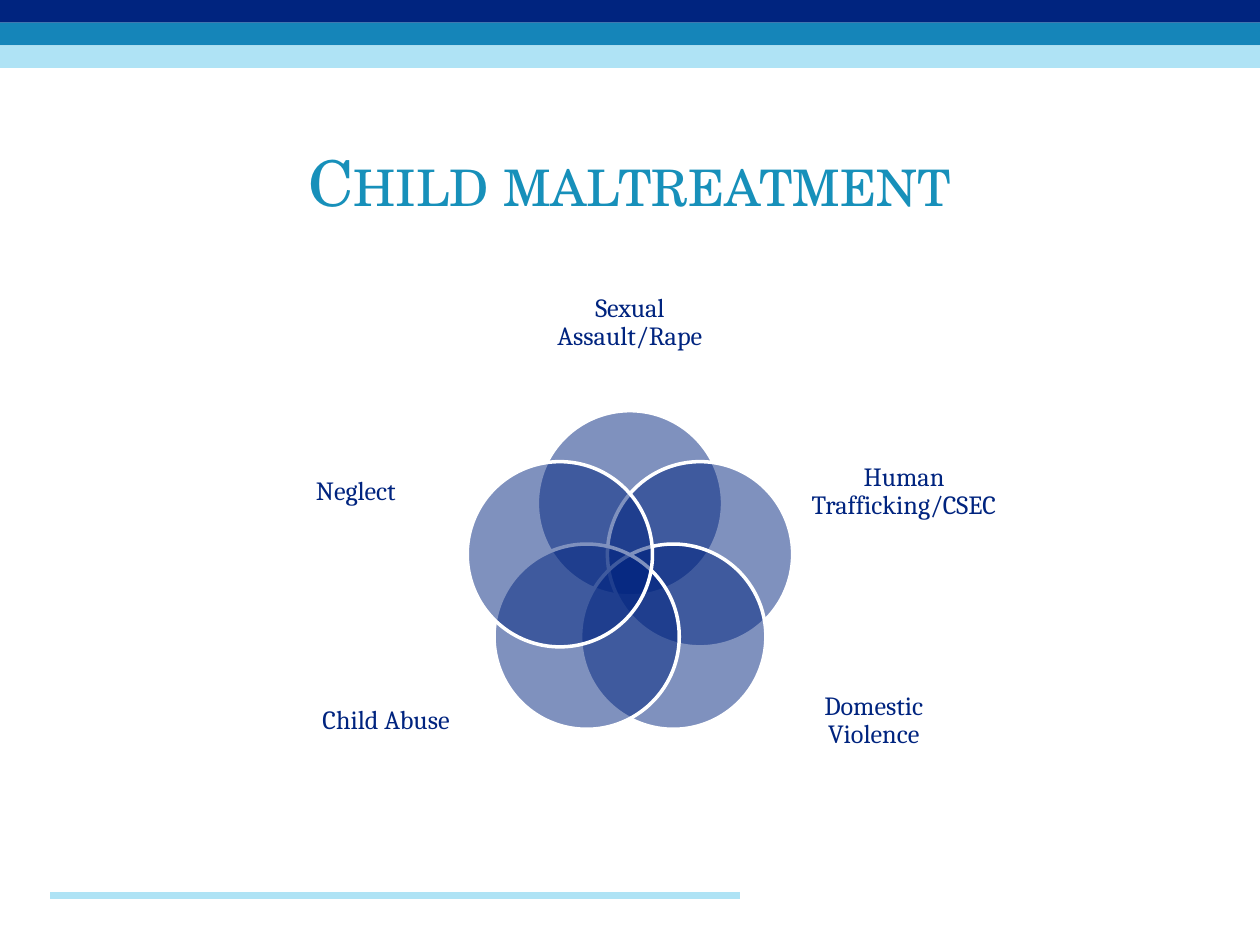
import math

from lxml import etree
from pptx import Presentation
from pptx import util as u
from pptx.dml.color import RGBColor
from pptx.enum import shapes, text
from pptx.oxml.ns import qn

HUES = {"navy": "00247F", "blue": "1585B9", "pale": "AFE3F5",
        "teal": "1790BA", "white": "FFFFFF"}


def hue(name):
    return RGBColor.from_string(HUES[name])


def write(frame, words, size=15, face="Cambria", color="navy", caps=False, space=None):
    frame.word_wrap = True
    frame.vertical_anchor = text.MSO_ANCHOR.MIDDLE
    para = frame.paragraphs[0]
    para.alignment = text.PP_ALIGN.CENTER
    if space:
        para.line_spacing = space
    run = para.add_run()
    run.text = words
    run.font.size = u.Pt(size)
    run.font.name = face
    run.font.color.rgb = hue(color)
    if caps:
        run._r.get_or_add_rPr().set("cap", "small")


class Deck:
    """Holds the style and the current slide."""

    def __init__(self):
        self.show = Presentation()
        self.show.slide_width = u.Inches(10)
        self.show.slide_height = u.Inches(7.5)
        self.slide = self.show.slides.add_slide(self.show.slide_layouts[6])

    def shape(self, kind, box, color):
        item = self.slide.shapes.add_shape(kind, *map(u.Inches, box))
        item.shadow.inherit = False
        item.fill.solid()
        item.fill.fore_color.rgb = hue(color)
        item.line.fill.background()
        return item

    def band(self, top, color):
        self.shape(shapes.MSO_SHAPE.RECTANGLE, (0, top, 10, 0.18), color)

    def disc(self, x, y, size):
        box = (x - size / 2, y - size / 2, size, size)
        item = self.shape(shapes.MSO_SHAPE.OVAL, box, "navy")
        tint = item._element.spPr.find(qn("a:solidFill")).find(qn("a:srgbClr"))
        etree.SubElement(tint, qn("a:alpha")).set("val", "50000")
        item.line.color.rgb = hue("white")
        item.line.width = u.Pt(2)

    def rule(self, left, right, y, color, width):
        ends = map(u.Inches, (left, y, right, y))
        item = self.slide.shapes.add_connector(shapes.MSO_CONNECTOR.STRAIGHT, *ends)
        item.line.color.rgb = hue(color)
        item.line.width = u.Pt(width)
        etree.SubElement(item._element.spPr, qn("a:effectLst"))

    def label(self, box, words, inset=True, **style):
        frame = self.slide.shapes.add_textbox(*map(u.Inches, box)).text_frame
        if not inset:
            frame.margin_left = frame.margin_right = 0
            frame.margin_top = frame.margin_bottom = 0
        write(frame, words, **style)


def main():
    deck = Deck()
    for i, color in enumerate(("navy", "blue", "pale")):
        deck.band(i * 0.18, color)
    deck.rule(0.4, 5.87, 7.11, "pale", 4)
    deck.label((0.5, 1.08, 9, 0.71), "Child maltreatment", size=36,
               face="TeX Gyre Schola", color="teal", caps=True)

    topics = (
        ("Sexual Assault/Rape", (4.15, 2.07, 1.7, 0.99)),
        ("Human Trafficking/CSEC", (6.41, 3.37, 1.53, 1.07)),
        ("Domestic Violence", (6.17, 5.19, 1.53, 1.07)),
        ("Child Abuse", (2.3, 5.19, 1.53, 1.07)),
        ("Neglect", (2.06, 3.37, 1.53, 1.07)),
    )
    ring = 0.585
    for i, (words, box) in enumerate(topics):
        turn = math.tau * i / len(topics)
        deck.disc(5 + ring * math.sin(turn), 4.58 - ring * math.cos(turn), 1.47)
        deck.label(box, words, inset=False, space=0.9)
    deck.show.save("out.pptx")


if __name__ == "__main__":
    main()
